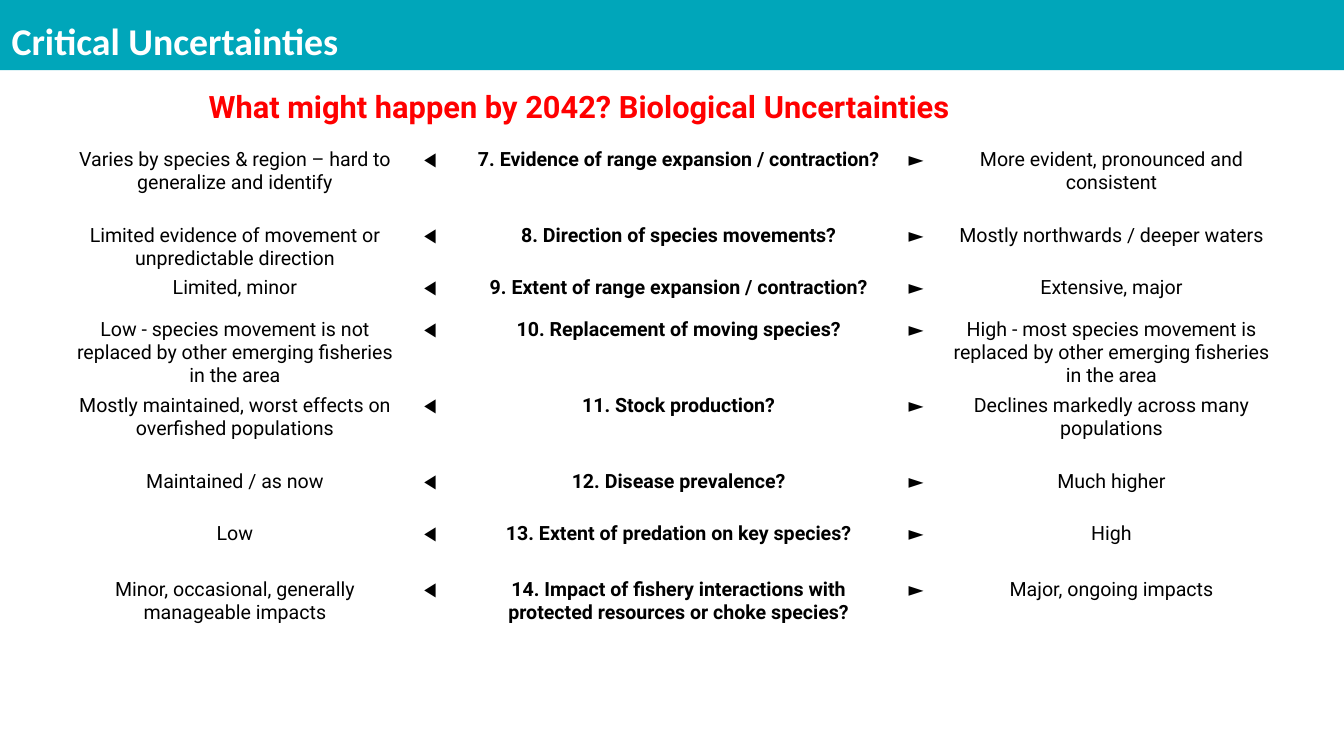
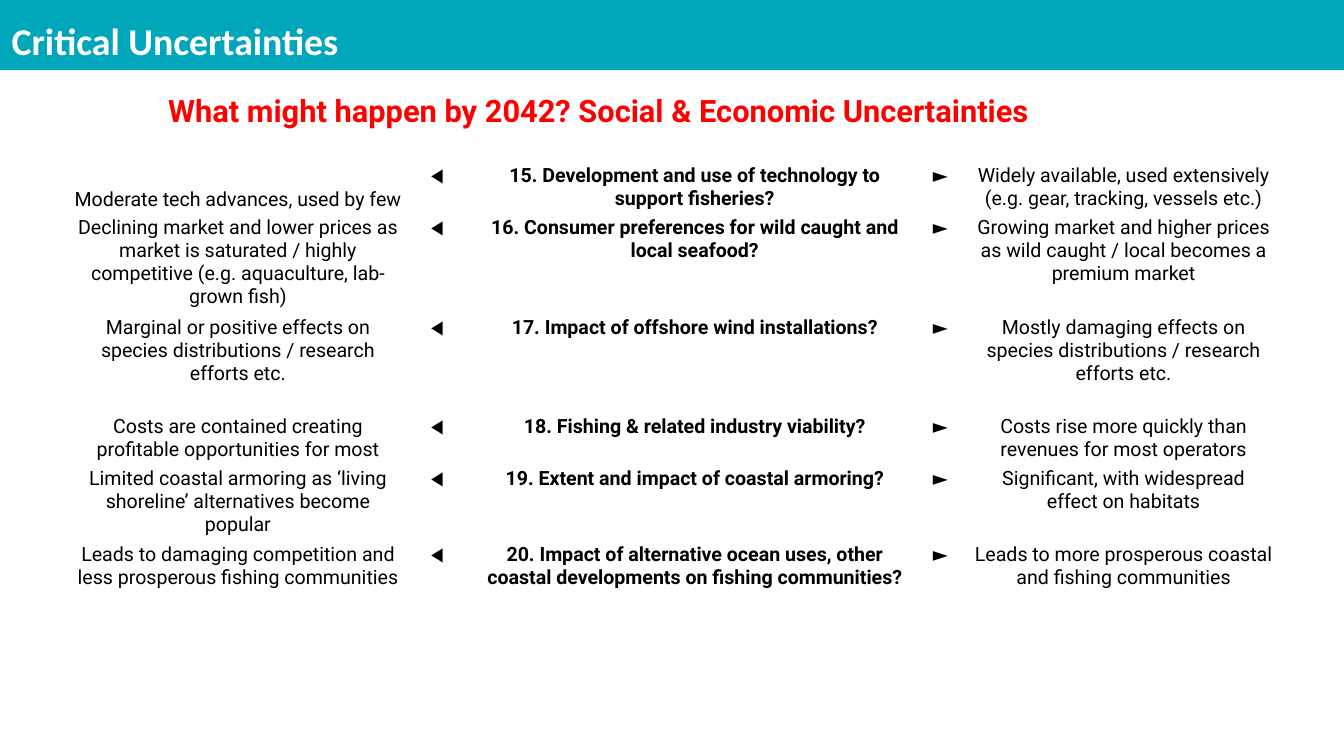
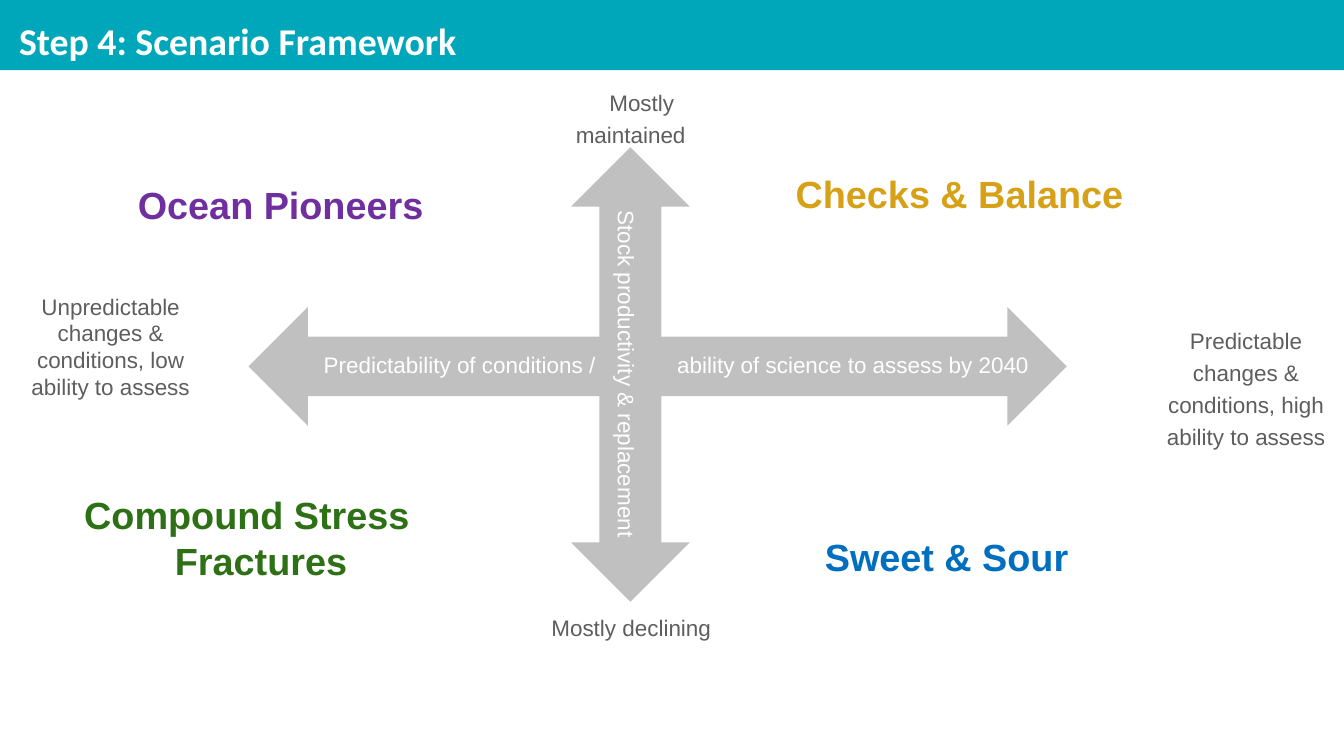
import pptx
import pptx.dml.color
import pptx.enum.shapes
import pptx.enum.text
import pptx.util

Inches = pptx.util.Inches
RGBColor = pptx.dml.color.RGBColor
Align = pptx.enum.text.PP_ALIGN
Anchor = pptx.enum.text.MSO_ANCHOR
Preset = pptx.enum.shapes.MSO_SHAPE

TEAL = RGBColor(0x00, 0xA6, 0xBA)
WHITE = RGBColor(0xFF, 0xFF, 0xFF)
BLACK = RGBColor(0x00, 0x00, 0x00)
RED = RGBColor(0xFF, 0x00, 0x00)
SILVER = RGBColor(0xC0, 0xC0, 0xC0)
GRAY = RGBColor(0x5E, 0x5E, 0x5E)
PURPLE = RGBColor(0x6F, 0x2F, 0x9F)
GREEN = RGBColor(0x2D, 0x70, 0x15)
GOLD = RGBColor(0xD6, 0xA1, 0x16)
BLUE = RGBColor(0x00, 0x6F, 0xC0)

TITLE = {"name": "Calibri", "size": pptx.util.Pt(54), "bold": True}
HEADING = {"name": "Roboto", "size": pptx.util.Pt(44), "bold": True}
CELL = {"name": "Roboto", "size": pptx.util.Pt(28), "bold": False}
QUESTION = {**CELL, "bold": True}
LABEL = {"name": "Arial", "size": pptx.util.Pt(32.1), "bold": False}
SCENARIO = {"name": "Arial", "size": pptx.util.Pt(54), "bold": True}

BIOLOGICAL_ROWS = [
    ("Varies by species & region – hard to generalize and identify",
     "7. Evidence of range expansion / contraction?",
     "More evident, pronounced and consistent"),
    ("Limited evidence of movement or unpredictable direction",
     "8. Direction of species movements?",
     "Mostly northwards / deeper waters"),
    ("Limited, minor",
     "9. Extent of range expansion / contraction?",
     "Extensive, major"),
    ("Low - species movement is not replaced by other emerging fisheries in the area",
     "10. Replacement of moving species?",
     "High - most species movement is replaced by other emerging fisheries in the area"),
    ("Mostly maintained, worst effects on overfished populations",
     "11. Stock production?",
     "Declines markedly across many populations"),
    ("Maintained / as now", "12. Disease prevalence?", "Much higher"),
    ("Low", "13. Extent of predation on key species?", "High"),
    ("Minor, occasional, generally manageable impacts",
     "14. Impact of fishery interactions with protected resources or choke species?",
     "Major, ongoing impacts"),
]
SOCIAL_ROWS = [
    ("Moderate tech advances, used by few",
     "15. Development and use of technology to support fisheries?",
     "Widely available, used extensively (e.g. gear, tracking, vessels etc.)"),
    ("Declining market and lower prices as market is saturated / highly competitive "
     "(e.g. aquaculture, lab-grown fish)",
     "16. Consumer preferences for wild caught and local seafood?",
     "Growing market and higher prices as wild caught / local becomes a premium market"),
    ("Marginal or positive effects on species distributions / research efforts etc.",
     "17. Impact of offshore wind installations?",
     "Mostly damaging effects on species distributions / research efforts etc."),
    ("Costs are contained creating profitable opportunities for most",
     "18. Fishing & related industry viability?",
     "Costs rise more quickly than revenues for most operators"),
    ("Limited coastal armoring as ‘living shoreline’ alternatives become popular",
     "19. Extent and impact of coastal armoring?",
     "Significant, with widespread effect on habitats"),
    ("Leads to damaging competition and less prosperous fishing communities",
     "20. Impact of alternative ocean uses, other coastal developments on fishing communities?",
     "Leads to more prosperous coastal and fishing communities"),
]


class ScenarioDeck:
    """Holds the deck style and the current slide, and adds elements to it."""

    def __init__(self):
        self.deck = pptx.Presentation()
        self.deck.slide_width = Inches(26.67)
        self.deck.slide_height = Inches(15)
        self.slide = None

    def fill_text(self, frame, text, style, color, align=Align.CENTER, spacing=None,
                  margin=0, indent=0):
        para = frame.paragraphs[0]
        para.alignment = align
        if spacing:
            para.line_spacing = spacing
        if margin or indent:
            properties = para._p.get_or_add_pPr()
            properties.set("marL", str(Inches(margin)))
            properties.set("indent", str(Inches(indent)))
        span = para.add_run()
        span.text = text
        for name, value in style.items():
            setattr(span.font, name, value)
        span.font.color.rgb = color

    def set_frame(self, frame, insets, anchor=Anchor.TOP):
        values = {"word_wrap": True, "auto_size": pptx.enum.text.MSO_AUTO_SIZE.NONE,
                  "vertical_anchor": anchor}
        sides = ("margin_left", "margin_top", "margin_right", "margin_bottom")
        values.update(zip(sides, map(Inches, insets)))
        for name, value in values.items():
            setattr(frame, name, value)

    def shape(self, preset, place, color):
        shape = self.slide.shapes.add_shape(preset, *map(Inches, place))
        shape.shadow.inherit = False
        shape.fill.solid()
        shape.fill.fore_color.rgb = color
        shape.line.fill.background()
        return shape

    def master_band(self):
        band = self.shape(Preset.RECTANGLE, (0, 0, 26.67, 1.39), TEAL)
        band.element.nvSpPr.cNvPr.set("id", "50")
        self.deck.slide_master.shapes.element.insert(2, band.element)

    def start_slide(self, title, place):
        self.slide = self.deck.slides.add_slide(self.deck.slide_layouts[5])
        if len(self.deck.slides) == 1:
            self.master_band()
        box = self.slide.shapes.title
        box.left, box.top, box.width, box.height = map(Inches, place)
        self.set_frame(box.text_frame, [0.06] * 4)
        self.fill_text(box.text_frame, title, TITLE, WHITE, Align.LEFT)

    def text(self, text, place, style, color, top=0.02, rotation=0, **layout):
        box = self.slide.shapes.add_textbox(*map(Inches, place))
        box.rotation = rotation
        self.set_frame(box.text_frame, (0, top, 0, 0))
        self.fill_text(box.text_frame, text, style, color, **layout)

    def heading(self, text, place):
        box = self.slide.shapes.add_textbox(*map(Inches, place))
        self.set_frame(box.text_frame, [0.06] * 4, Anchor.MIDDLE)
        self.fill_text(box.text_frame, text, HEADING, RED)

    def uncertainty_table(self, top, widths, heights, rows):
        place = (1.32, top, sum(widths), sum(heights))
        table = self.slide.shapes.add_table(
            len(rows), len(widths), *map(Inches, place)).table
        table.first_row = table.horz_banding = False
        for column, width in zip(table.columns, widths):
            column.width = Inches(width)
        for row, height, (low, question, high) in zip(table.rows, heights, rows):
            row.height = Inches(height)
            for cell, text in zip(row.cells, (low, "◀︎", question, "►", high)):
                cell.fill.background()
                is_question = text == question
                self.fill_text(cell.text_frame, text, QUESTION if is_question else CELL,
                               BLACK, margin=0.25 if is_question else 0)
        return table


def main():
    show = ScenarioDeck()

    title_place = (0.17, 0.3, 26.15, 1.02)
    show.start_slide("Critical Uncertainties", title_place)
    show.heading("What might happen by 2042? Biological Uncertainties",
                 (3.35, 1.68, 16.3, 0.85))
    show.uncertainty_table(2.89, (6.68, 1.08, 8.52, 1.16, 6.59),
                           (1.51, 1.03, 0.83, 1.51, 1.51, 1.03, 1.11, 1.03),
                           BIOLOGICAL_ROWS)

    show.start_slide("Critical Uncertainties", title_place)
    show.heading("What might happen by 2042? Social & Economic Uncertainties",
                 (2.51, 1.77, 18.75, 0.85))
    table = show.uncertainty_table(3.21, (6.8, 1.12, 8.84, 1.16, 6.11),
                                   (1.03, 1.98, 1.97, 1.03, 1.51, 1.03), SOCIAL_ROWS)
    table.cell(0, 0).vertical_anchor = Anchor.BOTTOM

    show.start_slide("Step 4: Scenario Framework", (0.32, 0.29, 23.99, 1.02))
    show.shape(Preset.LEFT_RIGHT_ARROW, (4.93, 6.09, 16.24, 2.36), SILVER)
    show.text("Predictability of conditions /", (6.15, 6.95, 5.94, 0.56), LABEL, WHITE)
    show.text("ability of science to assess by 2040", (13.1, 6.95, 7.65, 0.56),
              LABEL, WHITE)
    stock_arrow = show.shape(Preset.UP_DOWN_ARROW, (11.33, 2.92, 2.36, 9.02), SILVER)
    stock_arrow.adjustments[1] = 0.52
    show.text("Stock productivity & replacement", (8.6, 7.15, 7.82, 0.54), LABEL, WHITE,
              top=0, rotation=90, spacing=1.14)

    show.text("Mostly maintained", (10.99, 1.63, 3.03, 1.22), LABEL, GRAY,
              top=0.04, spacing=1.19, margin=0.02, indent=0.44)
    show.text("Mostly declining", (10.93, 12.16, 3.19, 1.1), LABEL, GRAY)
    show.text("Predictable changes & conditions, high ability to assess",
              (23.14, 6.35, 3.17, 2.17), LABEL, GRAY, top=0.04, spacing=1.19)
    show.text("Unpredictable changes & conditions, low ability to assess",
              (0.61, 5.81, 3.17, 2.18), LABEL, GRAY, spacing=0.99)

    show.text("Ocean Pioneers", (1.78, 3.59, 7.58, 0.93), SCENARIO, PURPLE)
    show.text("Compound Stress Fractures", (0.59, 9.74, 8.62, 1.83), SCENARIO, GREEN,
              margin=0.56, indent=-0.56)
    show.text("Checks & Balance", (14.94, 3.37, 8.2, 0.93), SCENARIO, GOLD)
    show.text("Sweet & Sour", (14.39, 10.57, 8.79, 0.93), SCENARIO, BLUE)

    show.deck.save("out.pptx")


if __name__ == "__main__":
    main()
